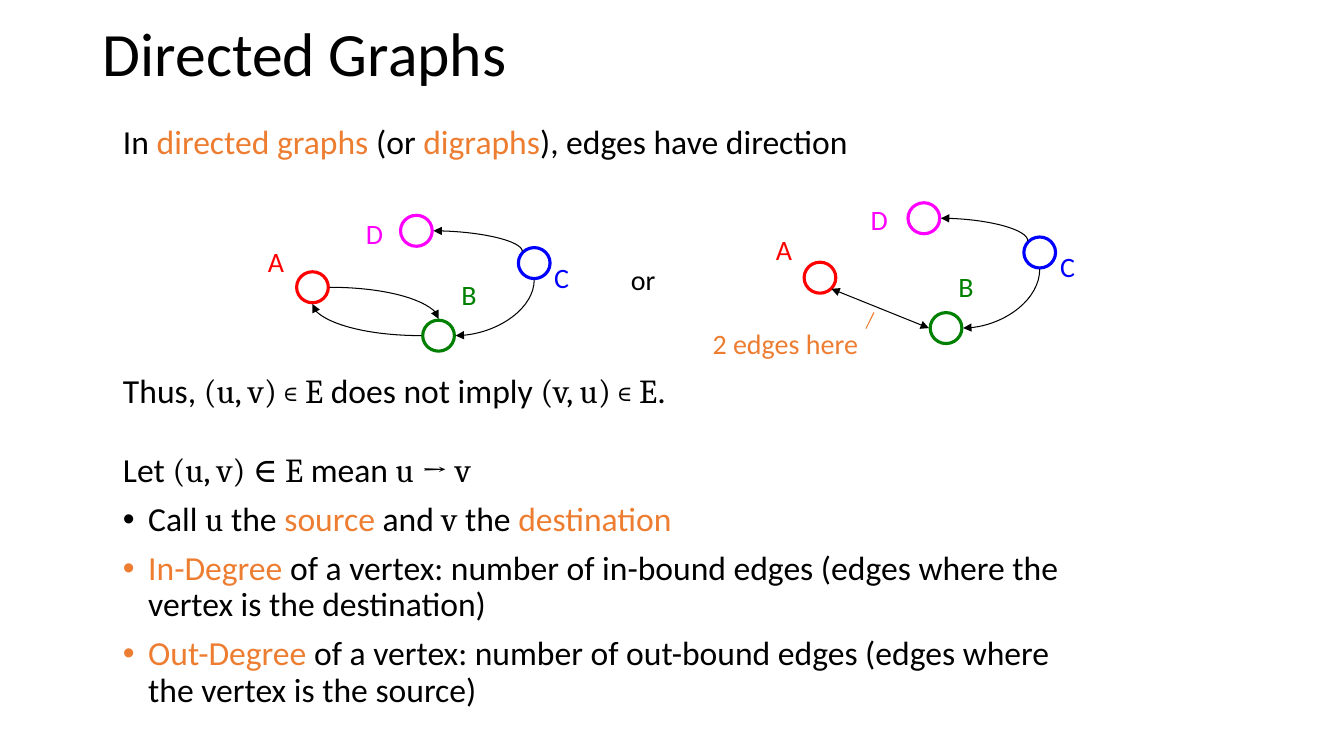
from dataclasses import dataclass, field
from typing import Any, NamedTuple

from lxml.etree import SubElement
from pptx import Presentation
from pptx.dml.color import RGBColor
from pptx.enum.shapes import MSO_CONNECTOR as Link, MSO_SHAPE as Preset
from pptx.enum.text import MSO_ANCHOR as Anchor, MSO_AUTO_SIZE as AutoSize, PP_ALIGN as Align
from pptx.oxml.ns import qn
from pptx.util import Inches, Pt

BLACK = RGBColor(0x00, 0x00, 0x00)
WHITE = RGBColor(0xFF, 0xFF, 0xFF)
ORANGE = RGBColor(0xED, 0x7D, 0x31)
RED = RGBColor(0xFF, 0x00, 0x00)
GREEN = RGBColor(0x00, 0x80, 0x00)
BLUE = RGBColor(0x00, 0x00, 0xFF)
MAGENTA = RGBColor(0xFF, 0x00, 0xFF)
VERTEX_COLORS = {"A": RED, "B": GREEN, "C": BLUE, "D": MAGENTA}

SANS, SERIF = "Calibri", "Cambria"
SLIDE_W, SLIDE_H = Inches(13.333), Inches(7.5)
RADIUS_X, RADIUS_Y = 1.18, 2.05
LABEL_W, LABEL_H = 2.7, 5.87

Point = tuple[float, float]
RIGHT, LEFT, TOP, BOTTOM = (1.08, 0), (-1.08, 0), (0, -1.08), (0, 1.08)
UPPER_LEFT, LOWER_RIGHT = (-0.75, -0.75), (0.72, 0.72)


class Words(NamedTuple):
    text: str
    color: RGBColor = BLACK
    font: str = SANS


class Vertex(NamedTuple):
    center: Point
    label: Point


class Edge(NamedTuple):
    begin: str
    begin_side: Point
    end: str
    end_side: Point
    arrows: tuple[str, ...]
    curved: bool = True


@dataclass
class Statement:
    words: list[Words]
    before: float = 9
    bullet: bool = False


@dataclass
class Graph:
    vertices: dict[str, Vertex]
    edges: list[Edge] = field(default_factory=list)


STATEMENTS = [
    Statement([Words("In "), Words("directed graphs ", ORANGE), Words("(or "),
               Words("digraphs", ORANGE), Words("), edges have direction")], 0),
    Statement([Words("Thus, "), Words("(u, v) ∊ E ", font=SERIF), Words("does not imply "),
               Words("(v, u) ∊ E", font=SERIF), Words(".")], 152.5),
    Statement([Words("Let "), Words("(u, v) ∈ E ", font=SERIF), Words("mean "),
               Words("u → v", font=SERIF)], 30.5),
    Statement([Words("Call "), Words("u", font=SERIF), Words(" the "), Words("source", ORANGE),
               Words(" and "), Words("v", font=SERIF), Words(" the "),
               Words("destination", ORANGE)], bullet=True),
    Statement([Words("In-Degree", ORANGE), Words(
        " of a vertex: number of in-bound edges (edges where the vertex is the destination)")],
        bullet=True),
    Statement([Words("Out-Degree", ORANGE), Words(
        " of a vertex: number of out-bound edges (edges where the vertex is the source)")],
        bullet=True),
]

SHARED_EDGES = [
    Edge("D", RIGHT, "C", UPPER_LEFT, ("headEnd",)),
    Edge("B", RIGHT, "C", BOTTOM, ("headEnd",)),
]
GRAPHS = [
    Graph({"A": Vertex((23.25, 38), (19.2, 31.73)),
           "B": Vertex((32.63, 44.4), (33.6, 36)),
           "C": Vertex((39.75, 34.8), (40.5, 33.87)),
           "D": Vertex((30.98, 30.53), (26.48, 28))},
          SHARED_EDGES + [Edge("B", LEFT, "A", BOTTOM, ("tailEnd",)),
                          Edge("A", RIGHT, "B", TOP, ("tailEnd",))]),
    Graph({"A": Vertex((61.01, 36.73), (57, 30.13)),
           "B": Vertex((70.39, 43.4), (70.58, 34.93)),
           "C": Vertex((77.36, 33.4), (78.15, 32.4)),
           "D": Vertex((68.74, 28.87), (64.05, 26.13))},
          SHARED_EDGES + [Edge("B", LEFT, "A", LOWER_RIGHT, ("headEnd", "tailEnd"), False)]),
]


def across(percent: float) -> int:
    return round(SLIDE_W * percent / 100)


def down(percent: float) -> int:
    return round(SLIDE_H * percent / 100)


def apply(target: Any, formats: dict[str, Any]) -> None:
    for attribute, value in formats.items():
        setattr(target, attribute, value)


def place(part: Any, left: float, top: float, width: float, height: float) -> None:
    apply(part, {"left": across(left), "top": down(top),
                 "width": across(width), "height": down(height)})


def write(paragraph: Any, words: Words, size: float) -> None:
    run = paragraph.add_run()
    run.text = words.text
    apply(run.font, {"name": words.font, "size": Pt(size)})
    run.font.color.rgb = words.color


def set_bullet(paragraph: Any, statement: Statement) -> None:
    properties = paragraph._p.get_or_add_pPr()
    indent = Inches(0.25) if statement.bullet else 0
    properties.set("marL", str(indent))
    properties.set("indent", str(-indent))
    if not statement.bullet:
        SubElement(properties, qn("a:buNone"))
        return
    color = SubElement(properties, qn("a:buClr"))
    SubElement(color, qn("a:srgbClr"), val=str(statement.words[0].color))
    SubElement(properties, qn("a:buFont"), typeface="Arial")
    SubElement(properties, qn("a:buChar"), char="•")


def add_label(slide: Any, words: Words, left: float, top: float, width: float) -> None:
    label = slide.shapes.add_textbox(across(left), down(top), across(width), down(LABEL_H))
    apply(label.text_frame, {"word_wrap": False, "auto_size": AutoSize.SHAPE_TO_FIT_TEXT})
    write(label.text_frame.paragraphs[0], words, 20)


def add_line(slide: Any, begin: Point, end: Point, color: RGBColor,
             arrows: tuple[str, ...] = (), curved: bool = False) -> None:
    kind = Link.CURVE if curved else Link.STRAIGHT
    link = slide.shapes.add_connector(kind, across(begin[0]), down(begin[1]),
                                      across(end[0]), down(end[1]))
    link.line.color.rgb = color
    link.line.width = Pt(0.75)
    properties = link._element.spPr
    if curved:
        properties.find(qn("a:prstGeom")).set("prst", "curvedConnector2")
    for arrow in arrows:
        SubElement(properties.find(qn("a:ln")), qn(f"a:{arrow}"), type="triangle")
    SubElement(properties, qn("a:effectLst"))


def side_point(vertex: Vertex, side: Point) -> Point:
    return vertex.center[0] + side[0] * RADIUS_X, vertex.center[1] + side[1] * RADIUS_Y


def add_graph(slide: Any, graph: Graph) -> None:
    for letter, vertex in graph.vertices.items():
        color = VERTEX_COLORS[letter]
        left, top = side_point(vertex, (-1, -1))
        circle = slide.shapes.add_shape(Preset.OVAL, across(left), down(top),
                                        across(2 * RADIUS_X), down(2 * RADIUS_Y))
        circle.shadow.inherit = False
        circle.fill.solid()
        circle.fill.fore_color.rgb = WHITE
        circle.line.color.rgb = color
        circle.line.width = Pt(2.25)
        add_label(slide, Words(letter, color), *vertex.label, LABEL_W)
    for edge in graph.edges:
        add_line(slide, side_point(graph.vertices[edge.begin], edge.begin_side),
                 side_point(graph.vertices[edge.end], edge.end_side),
                 BLACK, edge.arrows, edge.curved)


def main() -> None:
    deck = Presentation()
    apply(deck, {"slide_width": SLIDE_W, "slide_height": SLIDE_H})
    slide = deck.slides.add_slide(deck.slide_layouts[1])

    heading, explanation = slide.placeholders
    place(heading, 6.9, 1.87, 86.25, 11.33)
    apply(heading.text_frame, {"vertical_anchor": Anchor.MIDDLE, "auto_size": AutoSize.NONE})
    heading_line = heading.text_frame.paragraphs[0]
    apply(heading_line, {"alignment": Align.LEFT, "line_spacing": 0.9})
    write(heading_line, Words("Directed Graphs"), 44)

    place(explanation, 8.4, 15.87, 71.1, 80)
    frame = explanation.text_frame
    apply(frame, {"vertical_anchor": Anchor.TOP, "auto_size": AutoSize.NONE, "word_wrap": True})
    for index, statement in enumerate(STATEMENTS):
        paragraph = frame.add_paragraph() if index else frame.paragraphs[0]
        set_bullet(paragraph, statement)
        apply(paragraph, {"line_spacing": 0.9, "space_before": Pt(statement.before)})
        for words in statement.words:
            write(paragraph, words, 24)

    for graph in GRAPHS:
        add_graph(slide, graph)
    add_label(slide, Words("or"), 46.2, 34.13, 3.38)
    add_label(slide, Words("2 edges here", ORANGE), 52.28, 42.53, 12.5)
    add_line(slide, (64.43, 43.47), (65.03, 41.33), ORANGE)
    deck.save("out.pptx")


if __name__ == "__main__":
    main()
